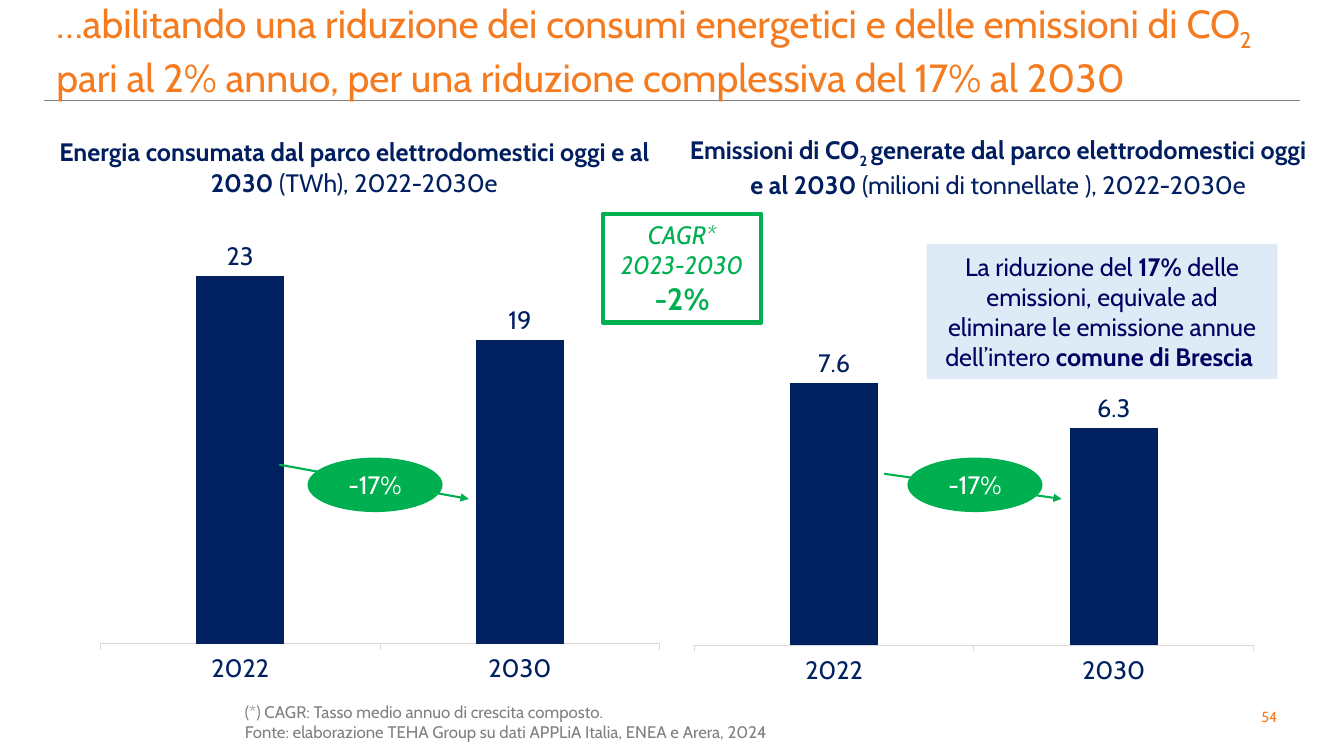
from dataclasses import dataclass
from lxml import etree
from pptx import Presentation
from pptx.chart.data import CategoryChartData
from pptx.dml.color import RGBColor
from pptx.enum.chart import XL_CHART_TYPE, XL_LABEL_POSITION, XL_TICK_LABEL_POSITION, XL_TICK_MARK
from pptx.enum.shapes import MSO_CONNECTOR, MSO_SHAPE
from pptx.enum.text import MSO_ANCHOR, PP_ALIGN
from pptx.oxml import parse_xml
from pptx.oxml.ns import nsdecls, qn
from pptx.util import Inches, Pt


@dataclass(frozen=True)
class Theme:
    face: str = "Cabin"
    orange: str = "F47B20"
    navy: str = "002060"
    head: str = "001E60"
    ink: str = "020060"
    green: str = "00B050"
    pale: str = "DEEBF7"
    gray: str = "808080"
    axis: str = "D9D9D9"
    white: str = "FFFFFF"
    title: float = 28
    big: float = 22
    body: float = 18
    note: float = 12
    page: float = 10.5


def rgb(code):
    return RGBColor.from_string(code)


class Board:
    def __init__(self, slide, theme):
        self.slide, self.theme = slide, theme

    def font(self, font, size, color):
        font.name, font.size = self.theme.face, Pt(size)
        font.color.rgb = rgb(color)

    def words(self, shape, paras, size, color, align, anchor):
        """Each paragraph is a list of (text, marks): b bold, i italic, s subscript, + big."""
        frame = shape.text_frame
        frame.word_wrap = True
        frame.vertical_anchor = anchor
        for n, runs in enumerate(paras):
            para = frame.add_paragraph() if n else frame.paragraphs[0]
            para.alignment = align
            self.font(para.font, size, color)
            for text, marks in runs:
                run = para.add_run()
                run.text = text
                if "b" in marks:
                    run.font.bold = True
                if "i" in marks:
                    run.font.italic = True
                if "+" in marks:
                    run.font.size = Pt(self.theme.big)
                if "s" in marks:
                    run.font._element.set("baseline", "-25000")

    def text(self, box, paras, size, color, align=PP_ALIGN.CENTER, anchor=MSO_ANCHOR.MIDDLE):
        shape = self.slide.shapes.add_textbox(*map(Inches, box))
        self.words(shape, paras, size, color, align, anchor)

    def shape(self, kind, box, paras, color, fill=None, line=None):
        shape = self.slide.shapes.add_shape(kind, *map(Inches, box))
        shape.shadow.inherit = False
        if fill:
            shape.fill.solid()
            shape.fill.fore_color.rgb = rgb(fill)
        else:
            shape.fill.background()
        if line:
            shape.line.color.rgb = rgb(line)
            shape.line.width = Pt(3)
        else:
            shape.line.fill.background()
        self.words(shape, paras, self.theme.body, color, PP_ALIGN.CENTER, MSO_ANCHOR.MIDDLE)

    def line(self, ends, color, width, arrow=False):
        line = self.slide.shapes.add_connector(MSO_CONNECTOR.STRAIGHT, *map(Inches, ends))
        line.line.color.rgb = rgb(color)
        line.line.width = Pt(width)
        props = line._element.spPr
        if arrow:
            etree.SubElement(props.find(qn("a:ln")), qn("a:tailEnd"), type="triangle")
        etree.SubElement(props, qn("a:effectLst"))

    def chart(self, box, vals, top, form, high):
        theme = self.theme
        data = CategoryChartData()
        data.categories = ["2022", "2030"]
        data.add_series("Series 1", vals)
        kind = XL_CHART_TYPE.COLUMN_CLUSTERED
        chart = self.slide.shapes.add_chart(kind, *map(Inches, box), data).chart
        chart.has_legend = chart.has_title = False
        self.font(chart.font, theme.body, theme.navy)

        # Axes
        vert, base = chart.value_axis, chart.category_axis
        vert.minimum_scale, vert.maximum_scale = 0, top
        vert.has_major_gridlines = vert.visible = False
        base.major_tick_mark = XL_TICK_MARK.OUTSIDE
        base.tick_label_position = XL_TICK_LABEL_POSITION.LOW
        base.format.line.color.rgb = rgb(theme.axis)
        base.format.line.width = Pt(0.75)
        self.font(base.tick_labels.font, theme.body, theme.navy)

        # Bars and labels
        plot = chart.plots[0]
        plot.gap_width, plot.overlap = 219, -27
        plot.vary_by_categories = False
        fill = plot.series[0].format.fill
        fill.solid()
        fill.fore_color.rgb = rgb(theme.navy)
        plot.has_data_labels = True
        labels = plot.data_labels
        labels.show_value = True
        labels.position = XL_LABEL_POSITION.OUTSIDE_END
        labels.number_format, labels.number_format_is_linked = form, False
        self.font(labels.font, theme.body, theme.navy)

        # Plot area, as shares of the chart
        area = chart._chartSpace.chart.plotArea
        for old in area.findall(qn("c:layout")):
            area.remove(old)
        parts = {"x": 0.02, "y": 0.02, "w": 0.96, "h": high}
        sizes = "".join(f'<c:{key} val="{val}"/>' for key, val in parts.items())
        area.insert(0, parse_xml(
            f'<c:layout {nsdecls("c")}><c:manualLayout><c:layoutTarget val="inner"/>'
            f'<c:xMode val="edge"/><c:yMode val="edge"/>{sizes}</c:manualLayout></c:layout>'))


def main():
    deck = Presentation()
    deck.slide_width, deck.slide_height = Inches(13.33), Inches(7.5)
    theme = Theme()
    board = Board(deck.slides.add_slide(deck.slide_layouts[6]), theme)

    # Title and rule
    board.line((0.44, 1, 12.89, 1), theme.gray, 0.75)
    board.text((0.46, 0, 12.41, 0.99), [[
        ("…abilitando una riduzione dei consumi energetici e delle emissioni di CO", ""),
        ("2", "s"),
        (" pari al 2% annuo, per una riduzione complessiva del 17% al 2030", ""),
    ]], theme.title, theme.orange, PP_ALIGN.LEFT)

    # Charts
    board.chart((0.88, 2.33, 5.78, 4.56), (23, 19), 25, "0", 0.87)
    board.chart((6.77, 3.42, 5.78, 3.47), (7.6, 6.3), 8.5, "0.0", 0.84)

    # Chart headings
    board.text((0.41, 1.3, 6.21, 0.71), [[
        ("Energia consumata dal parco elettrodomestici oggi e al 2030 ", "b"),
        ("(TWh), 2022-2030e", ""),
    ]], theme.body, theme.head)
    board.text((6.72, 1.3, 6.36, 0.71), [[
        ("Emissioni di CO", "b"),
        ("2 ", "bs"),
        ("generate dal parco elettrodomestici oggi e al 2030 ", "b"),
        ("(milioni di tonnellate ), 2022-2030e", ""),
    ]], theme.body, theme.head)

    # Falls from 2022 to 2030
    for ends, left in (((2.77, 4.61, 4.65, 4.95), 3.05), ((8.77, 4.7, 10.53, 4.95), 9)):
        board.line(ends, theme.green, 1.5, arrow=True)
        board.shape(MSO_SHAPE.OVAL, (left, 4.54, 1.34, 0.54), [[("-17%", "")]],
                    theme.white, fill=theme.green)

    # Callouts
    board.shape(MSO_SHAPE.RECTANGLE, (5.98, 2.12, 1.57, 1.08),
                [[("CAGR*", "i")], [("2023-2030", "i")], [("-2%", "b+")]],
                theme.green, line=theme.green)
    board.shape(MSO_SHAPE.RECTANGLE, (9.19, 2.42, 3.48, 1.34), [[
        ("La riduzione del ", ""),
        ("17%", "b"),
        (" delle emissioni, equivale ad eliminare le emissione annue dell’intero ", ""),
        ("comune di Brescia ", "b"),
    ]], theme.ink, fill=theme.pale)

    # Notes and page number
    notes = (
        (6.9, "(*) CAGR: Tasso medio annuo di crescita composto."),
        (7.1, "Fonte: elaborazione TEHA Group su dati APPLiA Italia, ENEA e Arera, 2024"),
    )
    for top, note in notes:
        board.text((2.33, top, 7.98, 0.33), [[(note, "")]], theme.note, theme.gray, PP_ALIGN.LEFT)
    board.text((12.36, 6.96, 0.46, 0.29), [[("54", "")]], theme.page, theme.orange)

    deck.save("out.pptx")


if __name__ == "__main__":
    main()
